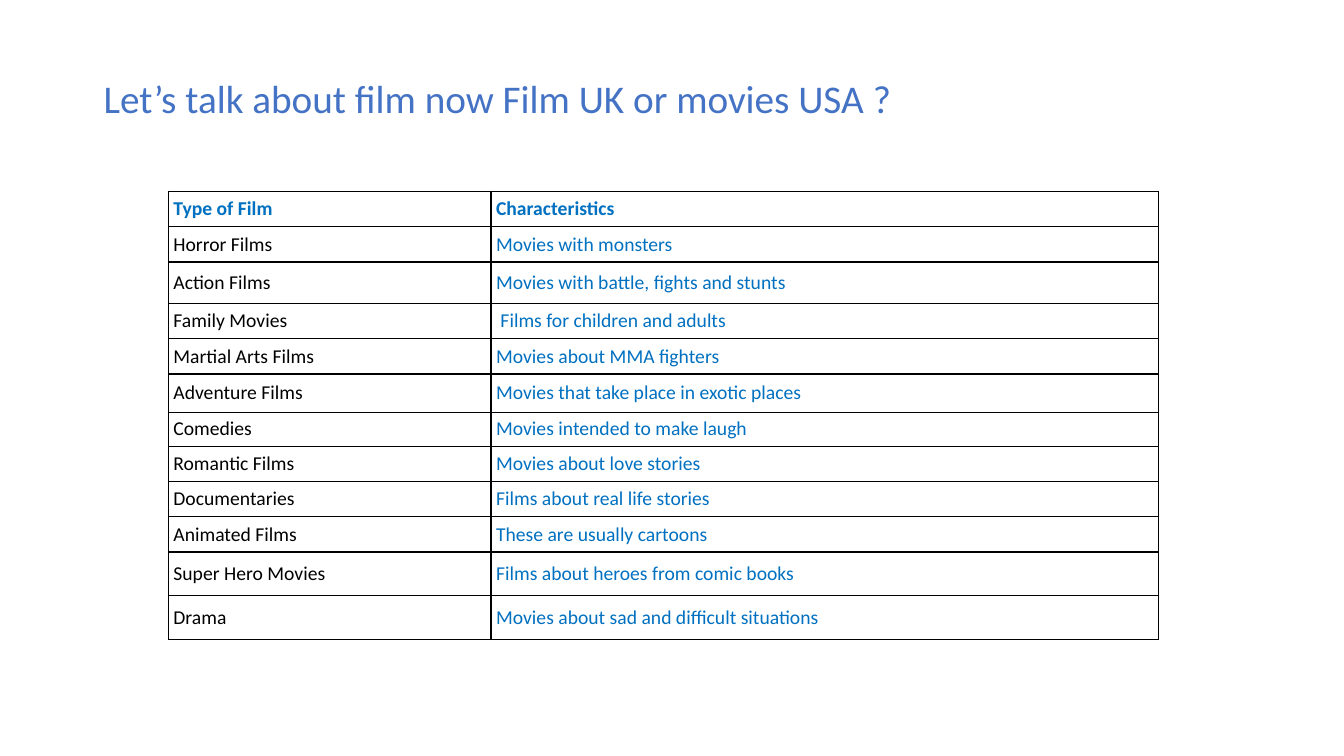
"""Build a slide that lists film types and their characteristics."""
import pptx
import pptx.dml.color
import pptx.enum.text
import pptx.oxml
import pptx.oxml.ns
import pptx.util
from pptx.util import Inches

COLOURS = {"title": "4472C4", "accent": "0070C0", "text": "000000",
           "border": "000000", "cell": "FFFFFF"}
FONT = "Calibri"
COLUMN_WIDTHS = (3.2, 6.62)
FILM_ROWS = [
    (0.35, "Type of Film", "Characteristics"),
    (0.35, "Horror Films", "Movies with monsters"),
    (0.41, "Action Films", "Movies with battle, fights and stunts"),
    (0.35, "Family Movies", " Films for children and adults"),
    (0.35, "Martial Arts Films", "Movies about MMA fighters"),
    (0.38, "Adventure Films", "Movies that take place in exotic places"),
    (0.33, "Comedies", "Movies intended to make laugh"),
    (0.35, "Romantic Films", "Movies about love stories"),
    (0.35, "Documentaries", "Films about real life stories"),
    (0.35, "Animated Films", "These are usually cartoons"),
    (0.43, "Super Hero Movies", "Films about heroes from comic books"),
    (0.44, "Drama", "Movies about sad and difficult situations"),
]


def rgb(name):
    """Return the named colour."""
    return pptx.dml.color.RGBColor.from_string(COLOURS[name])


def write_text(frame, text, size, colour, bold=False):
    """Put one formatted line of text in a text frame."""
    frame.text = text
    font = frame.paragraphs[0].runs[0].font
    font.name = FONT
    font.size = pptx.util.Pt(size)
    font.bold = bold
    font.color.rgb = rgb(colour)


def add_title(page, text):
    """Add the slide title."""
    box = page.shapes.add_textbox(Inches(0.93), Inches(0.69), Inches(8.1), Inches(0.57))
    box.text_frame.word_wrap = False
    box.text_frame.auto_size = pptx.enum.text.MSO_AUTO_SIZE.SHAPE_TO_FIT_TEXT
    write_text(box.text_frame, text, 28, "title")


def add_borders(cell):
    """Draw a thin line on every side of a cell."""
    properties = cell._tc.get_or_add_tcPr()
    namespace = pptx.oxml.ns.nsdecls("a")
    for index, side in enumerate(("lnL", "lnR", "lnT", "lnB")):
        line = pptx.oxml.parse_xml(
            f'<a:{side} {namespace} w="{pptx.util.Pt(1)}"><a:solidFill>'
            f'<a:srgbClr val="{COLOURS["border"]}"/></a:solidFill></a:{side}>')
        properties.insert(index, line)


def fill_cell(cell, text, colour, bold):
    """Set the text, background, margins and borders of a cell."""
    write_text(cell.text_frame, text, 14, colour, bold)
    cell.vertical_anchor = pptx.enum.text.MSO_ANCHOR.MIDDLE
    cell.margin_left = cell.margin_right = Inches(0.05)
    cell.margin_top = cell.margin_bottom = Inches(0.05)
    cell.fill.solid()
    cell.fill.fore_color.rgb = rgb("cell")
    add_borders(cell)


def add_film_table(page):
    """Add the table of film types."""
    height = sum(row[0] for row in FILM_ROWS)
    table = page.shapes.add_table(
        len(FILM_ROWS), len(COLUMN_WIDTHS), Inches(1.67), Inches(1.9),
        Inches(sum(COLUMN_WIDTHS)), Inches(height)).table
    table.horz_banding = False
    for column, width in zip(table.columns, COLUMN_WIDTHS):
        column.width = Inches(width)
    for row_index, (row_height, *texts) in enumerate(FILM_ROWS):
        table.rows[row_index].height = Inches(row_height)
        header = row_index == 0
        for column_index, text in enumerate(texts):
            colour = "accent" if header or column_index == 1 else "text"
            fill_cell(table.cell(row_index, column_index), text, colour, header)


def main():
    """Create and save the deck."""
    deck = pptx.Presentation()
    deck.slide_width, deck.slide_height = Inches(13.33), Inches(7.5)
    page = deck.slides.add_slide(deck.slide_layouts[6])
    add_film_table(page)
    add_title(page, "Let’s talk about film now Film UK or movies USA ?")
    deck.save("out.pptx")


if __name__ == "__main__":
    main()
